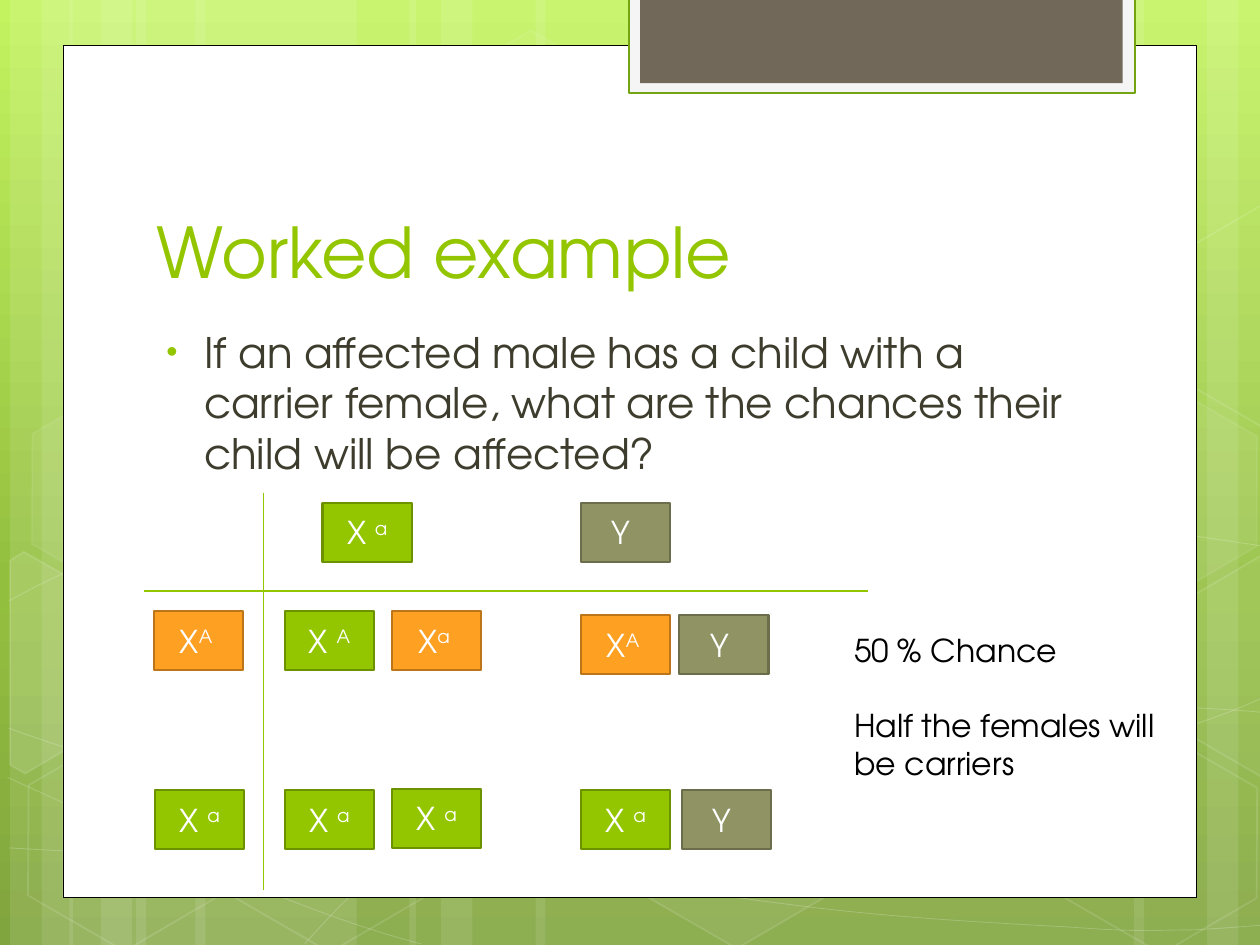
from lxml import etree
from copy import deepcopy
from pptx import Presentation
from pptx.dml.color import RGBColor
from pptx.enum import shapes, text
from pptx.oxml import ns
from pptx.util import Inches, Pt

FONT = "TeX Gyre Adventor"
COLORS = {
    "green": "94C600", "green_edge": "6D9200",
    "orange": "FEA022", "orange_edge": "BC7619",
    "olive": "909465", "olive_edge": "6B6D4B",
    "white": "FFFFFF", "black": "000000", "body": "3E3D2D",
    "frame": "F5F5F5", "frame_edge": "74A510", "banner": "71685A",
}
BACKDROP = [(0, "C3F35F"), (0.62, "93BF3F"), (1, "81A53E")]

# left, width
STRIPES = [(1.08, 1.75), (0.08, 0.5), (0.33, 0.83), (1.55, 1.75), (0.55, 0.5),
           (0.8, 0.83), (7.33, 1.75), (9.58, 0.5), (9, 0.83), (4.25, 3.08),
           (3.25, 0.5), (3.5, 0.83)]
# Start point, then two control points and an end point for each segment
CURVES = [
    [(0.07, 6.73), (0.61, 6.76), (1.15, 6.79), (1.9, 6.78), (2.65, 6.77),
     (3.58, 6.75), (4.58, 6.65), (5.58, 6.55), (7, 6.36), (7.92, 6.17),
     (8.83, 5.98), (9.77, 5.68), (10.07, 5.51)],
    [(0.07, 4.77), (0.36, 4.61), (0.65, 4.46), (1.21, 4.31), (1.78, 4.16),
     (2.59, 3.94), (3.47, 3.87), (4.36, 3.8), (5.44, 3.79), (6.54, 3.87),
     (7.64, 3.95), (9.47, 4.26), (10.07, 4.34)],
    [(0.06, 6.17), (1.27, 6.72), (2.47, 7.27), (3.34, 7.49)],
    [(0.07, 5.78), (0.38, 5.89), (0.7, 6), (1.28, 6.16), (1.86, 6.31),
     (2.73, 6.56), (3.57, 6.73), (4.4, 6.9), (5.45, 7.08), (6.28, 7.18),
     (7.11, 7.29), (8, 7.33), (8.53, 7.36), (9.05, 7.4), (9.19, 7.38),
     (9.45, 7.38), (9.71, 7.37), (9.89, 7.35), (10.07, 7.34)],
    [(2.42, 7.49), (2.6, 7.29), (2.78, 7.09), (3.02, 6.91), (3.26, 6.73),
     (3.6, 6.53), (3.88, 6.39), (4.16, 6.25), (4.33, 6.19), (4.7, 6.09),
     (5.06, 5.99), (5.73, 5.85), (6.08, 5.78), (6.44, 5.71), (6.49, 5.71),
     (6.8, 5.69), (7.11, 5.66), (7.6, 5.63), (7.94, 5.62), (8.29, 5.61),
     (8.86, 5.62), (8.86, 5.62), (9.08, 5.62), (9.3, 5.62), (9.53, 5.62),
     (9.71, 5.63), (9.88, 5.64), (9.97, 5.65), (10.06, 5.66), (10.03, 5.65),
     (10.06, 5.66)],
]
# left, top, fill opacity, line opacity
HEXAGONS = [(3.34, 0.36, 4, 8), (4.97, 5.89, 6, 12), (0.11, 5.91, 0, 12),
            (0.14, 3.12, 7, 8), (1.74, 5.92, 0, 12), (7.53, 4.53, 10, 12),
            (8.34, 5.93, 0, 12), (8.34, 3.14, 7, 8)]
# Hexagons cut off by the slide edge: points, fill opacity
CUT_HEXAGONS = [
    ([(0.08, 4.45), (0.19, 4.38), (0.96, 4.82), (0.95, 5.7), (0.2, 6.14), (0.08, 6.07)], 10),
    ([(9.26, 4.85), (10.01, 4.41), (10.09, 4.46), (10.09, 6.13), (10.02, 6.17), (9.26, 5.73)], 4),
    ([(9.26, 2.07), (10.01, 1.63), (10.1, 1.68), (10.09, 3.35), (10.02, 3.39), (9.26, 2.95)], 0),
]
# left, top within the square, colour, base letter, superscript
ALLELES = [
    (1.42, 0.08, "green", "X ", "a"), (3.47, 0.08, "olive", "Y ", ""),
    (0.08, 0.94, "orange", "X", "A "), (1.12, 0.94, "green", "X ", "A"),
    (1.97, 0.94, "orange", "X", "a "), (3.47, 0.97, "orange", "X", "A "),
    (4.25, 0.97, "olive", "Y ", ""), (0.09, 2.36, "green", "X ", "a"),
    (1.12, 2.36, "green", "X ", "a"), (1.97, 2.35, "green", "X ", "a"),
    (3.47, 2.36, "green", "X ", "a"), (4.27, 2.36, "olive", "Y ", ""),
]


def rgb(name):
    return RGBColor.from_string(COLORS[name])


def set_alpha(fill, percent):
    color = fill._xPr.find(".//" + ns.qn("a:srgbClr"))
    etree.SubElement(color, ns.qn("a:alpha")).set("val", str(percent * 1000))


def paint(s, fill=None, line=None, width=1, fill_alpha=100, line_alpha=100):
    s.shadow.inherit = False
    for part, color, alpha in ((s.fill, fill, fill_alpha), (s.line.fill, line, line_alpha)):
        if color and alpha:
            part.solid()
            part.fore_color.rgb = rgb(color)
            if alpha < 100:
                set_alpha(part, alpha)
        else:
            part.background()
    if line:
        s.line.width = Pt(width)


def add_box(slide, box, kind=shapes.MSO_SHAPE.RECTANGLE, **look):
    s = slide.shapes.add_shape(kind, *map(Inches, box))
    paint(s, **look)
    return s


def add_outline(slide, points, close, **look):
    points = [(Inches(x), Inches(y)) for x, y in points]
    builder = slide.shapes.build_freeform(*points[0])
    builder.add_line_segments(points[1:], close=close)
    s = builder.convert_to_shape()
    paint(s, **look)
    return s


def bend(s):
    """Turn every three line segments of an outline into one Bezier curve."""
    segments = list(s._element.iter(ns.qn("a:lnTo")))
    for i in range(0, len(segments), 3):
        curve = etree.Element(ns.qn("a:cubicBezTo"))
        segments[i].addprevious(curve)
        for segment in segments[i:i + 3]:
            curve.append(segment[0])
            segment.getparent().remove(segment)


def add_run(p, words, size, color):
    r = p.add_run()
    r.text = words
    r.font.size = Pt(size)
    r.font.name = FONT
    r.font.color.rgb = rgb(color)
    return r


def place(s, box):
    s.left, s.top, s.width, s.height = map(Inches, box)


def add_backdrop(slide, height):
    fill = slide.background.fill
    fill.gradient()
    fill.gradient_angle = 270
    last = fill.gradient_stops[-1]._gs
    last.addnext(deepcopy(last))
    for stop, (position, color) in zip(fill.gradient_stops, BACKDROP):
        stop.position = position
        stop.color.rgb = RGBColor.from_string(color)

    for left, width in STRIPES:
        add_box(slide, (left, 0, width, height), fill="white", fill_alpha=10)
    for curve in CURVES:
        bend(add_outline(slide, curve, False, line="white", width=0.5, line_alpha=20))
    for left, top, fill_alpha, line_alpha in HEXAGONS:
        s = add_box(slide, (left, top, 1.75, 1.52), shapes.MSO_SHAPE.HEXAGON, fill="white",
                    line="white", fill_alpha=fill_alpha, line_alpha=line_alpha)
        s.adjustments[0] = 0.285
        s.rotation = 30
    for points, fill_alpha in CUT_HEXAGONS:
        add_outline(slide, points, True, fill="white", line="white",
                    fill_alpha=fill_alpha, line_alpha=12)


def add_panel(slide, box):
    x, y, w, h = box
    add_box(slide, box, fill="white", line="black", width=0.5)
    add_box(slide, (x + 4.49, y - 0.38, 4.02, 0.76), fill="frame", line="frame_edge", width=1.25)
    add_box(slide, (x + 4.58, y - 0.38, 3.83, 0.68), fill="banner")


def fill_title(s, box, words):
    place(s, box)
    s.text_frame.vertical_anchor = text.MSO_ANCHOR.BOTTOM
    p = s.text_frame.paragraphs[0]
    p.alignment = text.PP_ALIGN.LEFT
    add_run(p, words, 40, "green")


def fill_question(s, box, words):
    place(s, box)
    p = s.text_frame.paragraphs[0]
    p.space_before = Pt(4.8)
    add_run(p, words, 24, "body")
    pPr = p._p.get_or_add_pPr()
    pPr.set("marL", str(Inches(0.38)))
    pPr.set("indent", str(Inches(-0.3)))
    color = etree.SubElement(pPr, ns.qn("a:buClr"))
    etree.SubElement(color, ns.qn("a:srgbClr")).set("val", COLORS["green"])
    for tag, key, value in (("buSzPct", "val", "76000"), ("buFont", "typeface", "Arial"),
                            ("buChar", "char", "•")):
        etree.SubElement(pPr, ns.qn("a:" + tag)).set(key, value)


def add_punnett_square(slide, box):
    x, y, w, h = box
    for ends in ((x, y + 0.78, x + w, y + 0.78), (x + 0.95, y, x + 0.95, y + h)):
        line = slide.shapes.add_connector(shapes.MSO_CONNECTOR.STRAIGHT, *map(Inches, ends))
        line.line.color.rgb = rgb("green")
        line.line.width = Pt(0.75)
        etree.SubElement(line._element.spPr, ns.qn("a:effectLst"))
    for left, top, color, letter, superscript in ALLELES:
        s = add_box(slide, (x + left, y + top, 0.71, 0.47),
                    fill=color, line=color + "_edge", width=1.25)
        s.text_frame.vertical_anchor = text.MSO_ANCHOR.MIDDLE
        p = s.text_frame.paragraphs[0]
        p.alignment = text.PP_ALIGN.CENTER
        add_run(p, letter, 18, "white")
        if superscript:
            r = add_run(p, superscript, 18, "white")
            r.font._element.set("baseline", "30000")


def add_conclusion(slide, box, lines):
    tf = slide.shapes.add_textbox(*map(Inches, box)).text_frame
    tf.word_wrap = True
    for i, words in enumerate(lines):
        p = tf.add_paragraph() if i else tf.paragraphs[0]
        p.space_before = Pt(21.3 if i else 0)
        add_run(p, words, 18, "black")


def main():
    prs = Presentation()
    prs.slide_width, prs.slide_height = Inches(10), Inches(7.5)
    slide = prs.slides.add_slide(prs.slide_layouts[1])
    title, body = slide.placeholders
    add_backdrop(slide, 7.5)
    add_panel(slide, (0.5, 0.36, 9, 6.76))
    # Bring the placeholders in front of the panel
    for s in (title, body):
        slide.shapes._spTree.append(s._element)
    fill_title(title, (1.14, 1.12, 7.68, 1.25), "Worked example")
    fill_question(body, (1.14, 2.54, 7.41, 3.84),
                  "If an affected male has a child with a carrier female, "
                  "what are the chances their child will be affected?")
    add_punnett_square(slide, (1.14, 3.91, 5.75, 3.15))
    add_conclusion(slide, (6.68, 4.96, 2.6, 1.31),
                   ["50 % Chance", "Half the females will be carriers"])
    prs.save("out.pptx")


if __name__ == "__main__":
    main()
